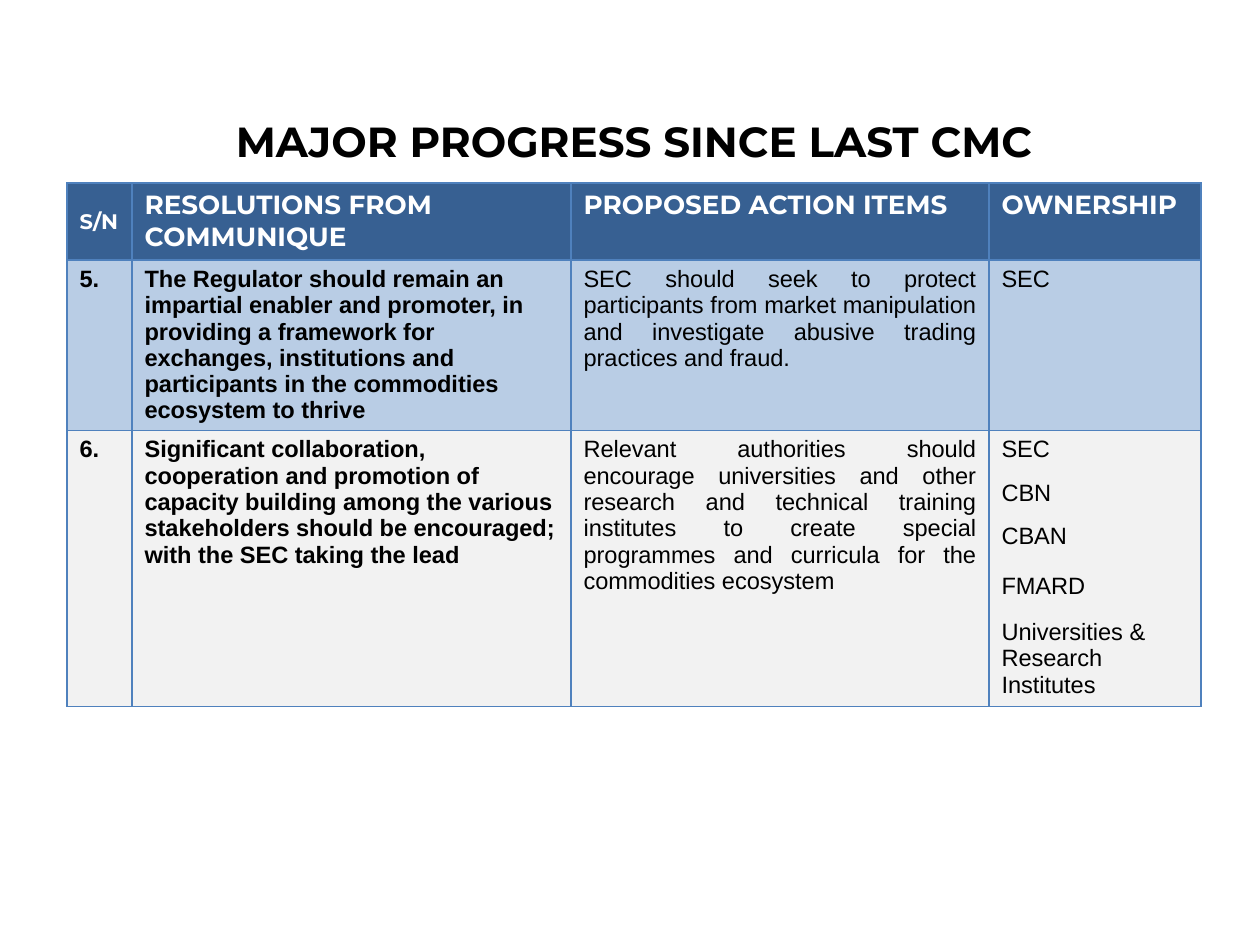
from lxml import etree
from pptx import Presentation
from pptx.dml.color import RGBColor
from pptx.enum.text import MSO_ANCHOR as Anchor, MSO_AUTO_SIZE as AutoSize, PP_ALIGN as Align
from pptx.oxml.ns import qn
from pptx.util import Emu, Pt

BLACK = RGBColor(0x00, 0x00, 0x00)
WHITE = RGBColor(0xFF, 0xFF, 0xFF)
HEADER_BLUE = RGBColor(0x37, 0x60, 0x92)
ROW_BLUE = RGBColor(0xB9, 0xCD, 0xE5)
ROW_GREY = RGBColor(0xF2, 0xF2, 0xF2)
BORDER_BLUE = RGBColor(0x4F, 0x81, 0xBD)

PX_PER_INCH = 126
HEADING_FONT, BODY_FONT = "Montserrat", "Arial"

COLUMN_WIDTHS = [65, 439, 418, 212]
ROW_HEIGHTS = [77, 170, 276]
ROW_FILLS = [HEADER_BLUE, ROW_BLUE, ROW_GREY]
OWNER_GAPS = [0, 9.75, 9.75, 13.5, 11.25]  # points before each owner

HEADINGS = ["S/N", "RESOLUTIONS FROM COMMUNIQUE", "PROPOSED ACTION ITEMS", "OWNERSHIP"]
RESOLUTIONS = [
    ("5.",
     "The Regulator should remain an impartial enabler and promoter, in providing a "
     "framework for exchanges, institutions and participants in the commodities "
     "ecosystem to thrive",
     "SEC should seek to protect participants from market manipulation and investigate "
     "abusive trading practices and fraud.",
     ["SEC"]),
    ("6.",
     "Significant collaboration, cooperation and promotion of capacity building among the "
     "various stakeholders should be encouraged; with the SEC taking the lead",
     "Relevant authorities should encourage universities and other research and technical "
     "training institutes to create special programmes and curricula for the commodities "
     "ecosystem",
     ["SEC", "CBN", "CBAN", "FMARD", "Universities & Research Institutes"]),
]


def px(length):
    return Emu(round(length * 914400 / PX_PER_INCH))


class SlideBuilder:
    def __init__(self, deck):
        self.slide = deck.slides.add_slide(deck.slide_layouts[5])

    def style(self, para, size, color, font, bold, align=Align.LEFT):
        para.alignment = align
        for span in para.runs:
            span.font.size = Pt(size)
            span.font.name = font
            span.font.bold = bold
            span.font.color.rgb = color

    def title(self, text, left, top, width, height):
        box = self.slide.shapes.title
        box.left, box.top, box.width, box.height = map(px, (left, top, width, height))
        frame = box.text_frame
        frame.text = text
        frame.auto_size = AutoSize.NONE
        frame.vertical_anchor = Anchor.MIDDLE
        self.style(frame.paragraphs[0], 24, BLACK, HEADING_FONT, True, Align.CENTER)

    def table(self, left, top, widths, heights):
        table = self.slide.shapes.add_table(
            len(heights), len(widths), px(left), px(top),
            px(sum(widths)), px(sum(heights))).table
        for column, width in zip(table.columns, widths):
            column.width = px(width)
        for row, height in zip(table.rows, heights):
            row.height = px(height)
        return table

    def cell(self, cell, lines, fill, gaps=(0,), **style):
        frame = cell.text_frame
        for index, (line, gap) in enumerate(zip(lines, gaps)):
            para = frame.add_paragraph() if index else frame.paragraphs[0]
            para.text = line
            if index:
                para.space_before = Pt(gap)
            self.style(para, **style)
        self.borders(cell)
        cell.fill.solid()
        cell.fill.fore_color.rgb = fill

    def borders(self, cell):
        properties = cell._tc.get_or_add_tcPr()
        for side in ("a:lnL", "a:lnR", "a:lnT", "a:lnB"):
            line = etree.SubElement(properties, qn(side), w=str(Pt(1)))
            solid = etree.SubElement(line, qn("a:solidFill"))
            etree.SubElement(solid, qn("a:srgbClr"), val=str(BORDER_BLUE))


def main():
    deck = Presentation()
    deck.slide_width, deck.slide_height = px(1260), px(945)
    builder = SlideBuilder(deck)

    # Title
    builder.title("MAJOR PROGRESS SINCE LAST CMC", 67, 106, 1134, 69)

    # Header row
    table = builder.table(67, 183, COLUMN_WIDTHS, ROW_HEIGHTS)
    for column, heading in enumerate(HEADINGS):
        builder.cell(table.cell(0, column), [heading], ROW_FILLS[0],
                     size=15 if column else 12, color=WHITE, font=HEADING_FONT, bold=True)
    table.cell(0, 0).vertical_anchor = Anchor.MIDDLE

    # Resolution rows
    for row, (number, resolution, action, owners) in enumerate(RESOLUTIONS, start=1):
        columns = [[number], [resolution], [action], owners]
        for column, lines in enumerate(columns):
            builder.cell(table.cell(row, column), lines, ROW_FILLS[row], OWNER_GAPS,
                         size=13.5, color=BLACK, font=BODY_FONT, bold=column < 2,
                         align=Align.JUSTIFY if column == 2 else Align.LEFT)

    deck.save("out.pptx")


if __name__ == "__main__":
    main()
